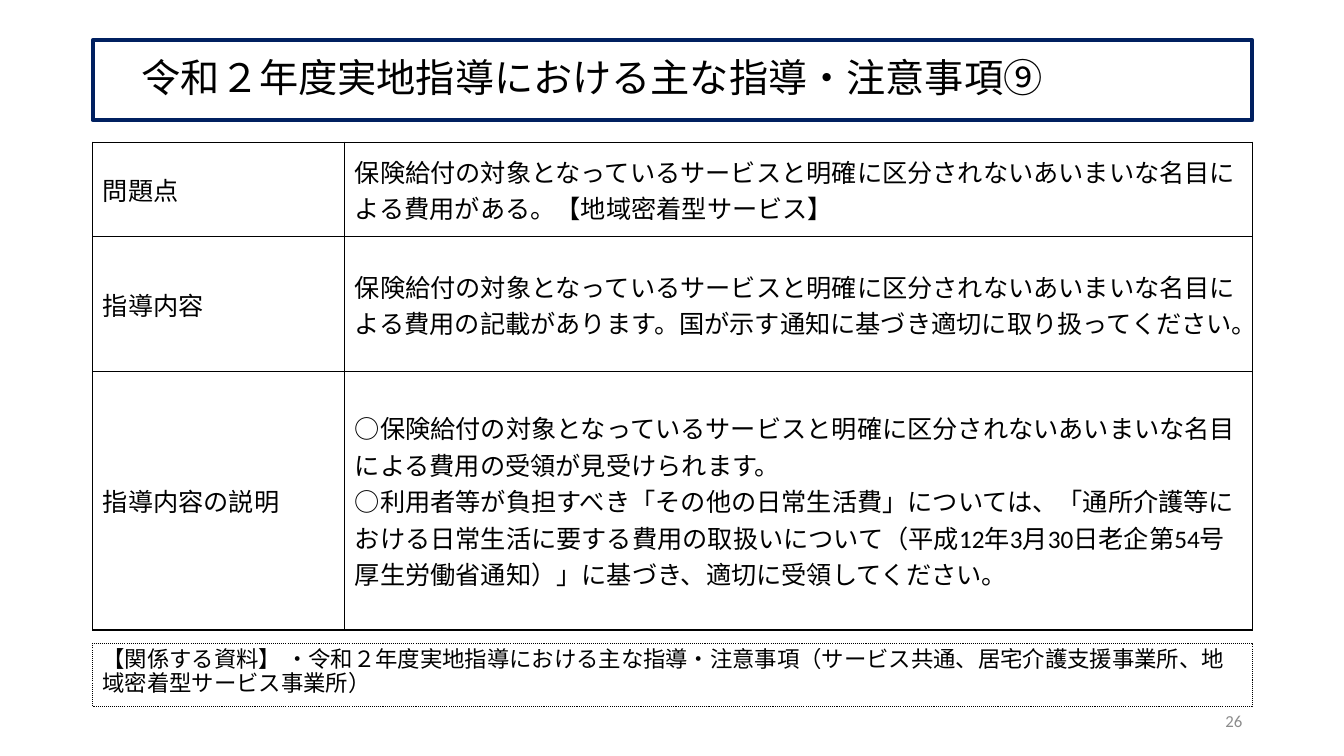
import pptx
import pptx.dml.color
import pptx.enum.dml
import pptx.enum.shapes
import pptx.enum.text
import pptx.oxml
import pptx.oxml.ns
import pptx.util

Inches = pptx.util.Inches
Pt = pptx.util.Pt
Align = pptx.enum.text.PP_ALIGN
Anchor = pptx.enum.text.MSO_ANCHOR

LEFT, WIDTH = 0.92, 11.5
ROW_HEIGHTS = [0.94, 1.34, 2.56]
COLUMN_WIDTHS = [2.5, 9]
COLUMN_FONTS = ["Arial", "Calibri"]
GUIDANCE = [
    ("問題点", "保険給付の対象となっているサービスと明確に区分されないあいまいな名目による費用がある。【地域密着型サービス】"),
    ("指導内容", "保険給付の対象となっているサービスと明確に区分されないあいまいな名目による費用の記載があります。"
     "国が示す通知に基づき適切に取り扱ってください。"),
    ("指導内容の説明", "○保険給付の対象となっているサービスと明確に区分されないあいまいな名目による費用の受領が見受けられます。\n"
     "○利用者等が負担すべき「その他の日常生活費」については、「通所介護等における日常生活に要する費用の取扱いについて"
     "（平成12年3月30日老企第54号厚生労働省通知）」に基づき、適切に受領してください。"),
]


def color(value):
    return pptx.dml.color.RGBColor.from_string(value)


class SlideBuilder:
    font = "Calibri"
    ink = "000000"

    def __init__(self, slide):
        self.slide = slide

    def set_text(self, frame, text, size, font=None, ink=None, align=Align.LEFT, spacing=None, before=None):
        frame.word_wrap = True
        frame.text = text
        for paragraph in frame.paragraphs:
            paragraph.alignment = align
            paragraph.line_spacing = spacing
            paragraph.space_before = before
            paragraph.font.size = Pt(size)
            paragraph.font.name = font or self.font
            paragraph.font.color.rgb = color(ink or self.ink)

    def box(self, top, height, text, size, line, weight, anchor, dash=None, before=None):
        shape = self.slide.shapes.add_shape(
            pptx.enum.shapes.MSO_SHAPE.RECTANGLE, Inches(LEFT), Inches(top), Inches(WIDTH), Inches(height))
        shape.shadow.inherit = False
        shape.fill.background()
        shape.line.color.rgb = color(line)
        shape.line.width = Pt(weight)
        if dash:
            shape.line.dash_style = dash
        shape.text_frame.vertical_anchor = anchor
        self.set_text(shape.text_frame, text, size, spacing=0.9, before=before)

    def label(self, left, top, width, height, text, size, ink):
        frame = self.slide.shapes.add_textbox(
            Inches(left), Inches(top), Inches(width), Inches(height)).text_frame
        frame.vertical_anchor = Anchor.MIDDLE
        self.set_text(frame, text, size, ink=ink, align=Align.RIGHT)

    def border(self, cell):
        properties = cell._tc.get_or_add_tcPr()
        for side in "LRTB":
            properties.append(pptx.oxml.parse_xml(
                f'<a:ln{side} {pptx.oxml.ns.nsdecls("a")} w="{Pt(1)}"><a:solidFill>'
                f'<a:srgbClr val="{self.ink}"/></a:solidFill></a:ln{side}>'))

    def table(self, top, rows, size):
        table = self.slide.shapes.add_table(
            len(rows), len(COLUMN_WIDTHS), Inches(LEFT), Inches(top),
            Inches(WIDTH), Inches(sum(ROW_HEIGHTS))).table
        table.first_row = False
        table.horz_banding = False
        for column, width in zip(table.columns, COLUMN_WIDTHS):
            column.width = Inches(width)
        for row, height, texts in zip(table.rows, ROW_HEIGHTS, rows):
            row.height = Inches(height)
            for cell, text, font in zip(row.cells, texts, COLUMN_FONTS):
                self.border(cell)
                cell.fill.background()
                cell.vertical_anchor = Anchor.MIDDLE
                self.set_text(cell.text_frame, text, size, font=font)


def main():
    presentation = pptx.Presentation()
    presentation.slide_width = Inches(13.33)
    presentation.slide_height = Inches(7.5)
    builder = SlideBuilder(presentation.slides.add_slide(presentation.slide_layouts[6]))
    builder.box(0.4, 0.79, "　令和２年度実地指導における主な指導・注意事項⑨", 28, "002060", 3, Anchor.MIDDLE)
    builder.table(1.41, GUIDANCE, 18)
    builder.label(9.42, 6.95, 3, 0.4, "26", 12, "8C8C8C")
    builder.box(
        6.38, 0.63,
        "【関係する資料】 ・令和２年度実地指導における主な指導・注意事項（サービス共通、居宅介護支援事業所、地域密着型サービス事業所）",
        16, builder.ink, 0.75, Anchor.TOP, pptx.enum.dml.MSO_LINE.ROUND_DOT, Pt(10))
    presentation.save("out.pptx")


if __name__ == "__main__":
    main()
